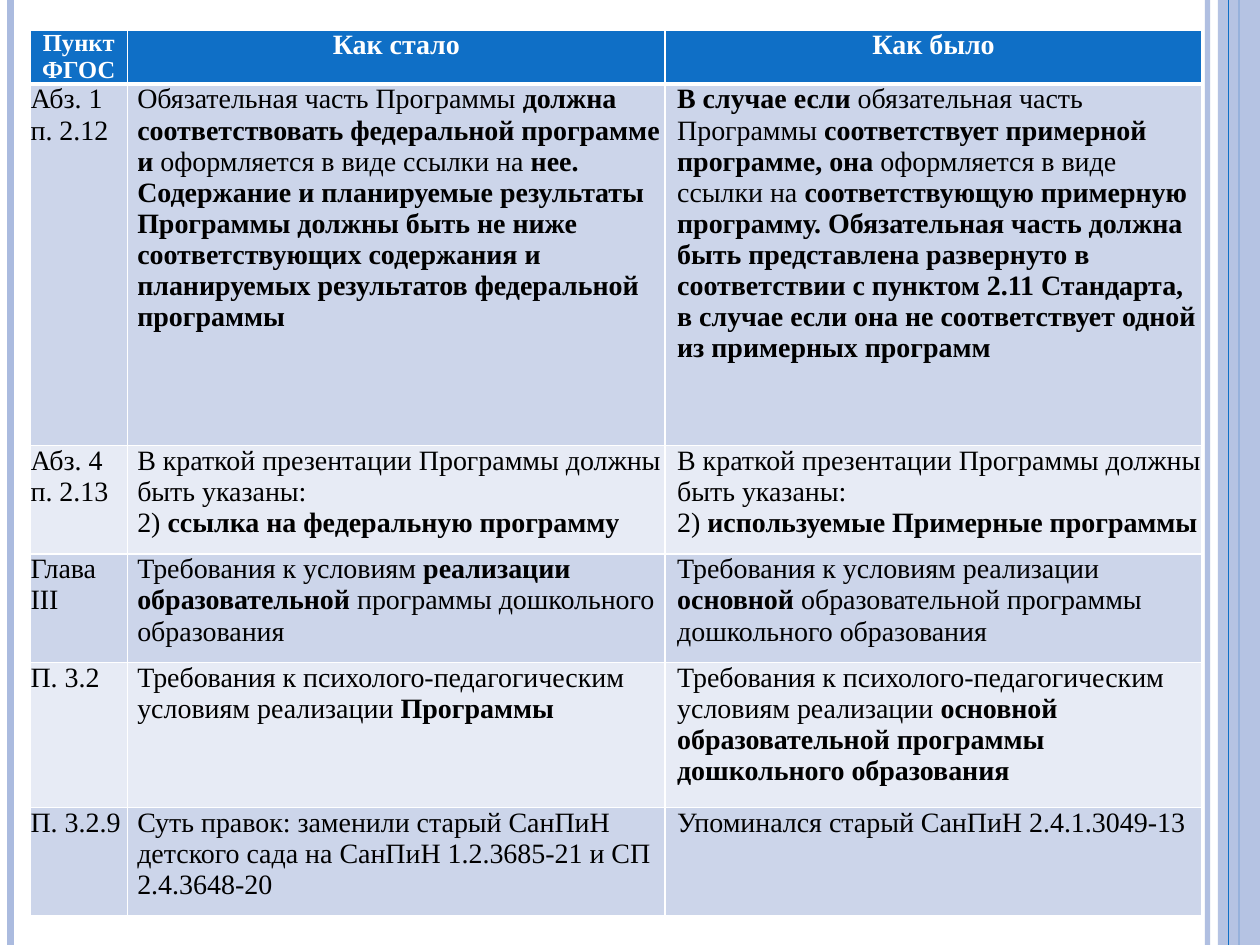
from dataclasses import dataclass
from itertools import product

from lxml.etree import SubElement
from pptx import Presentation
from pptx.dml.color import RGBColor as Rgb
from pptx.enum.shapes import MSO_CONNECTOR as Connector, MSO_SHAPE as Shape
from pptx.enum.text import PP_ALIGN as Align
from pptx.oxml import parse_xml
from pptx.oxml.ns import nsdecls, qn
from pptx.util import Pt

WIDTH, HEIGHT = 720, 540
COLORS = {
    "accent": "0F6FC6",
    "stripe": "ABBBDF",
    "band_dark": "CCD5EA",
    "band_light": "E7EBF5",
    "white": "FFFFFF",
    "black": "000000",
}
STRIPES_BELOW = [(690, "stripe", 3, 93), (6, "stripe", 4.5, 100), (708, "accent", 1.5, 100)]
COLUMN_WIDTHS = [56, 307, 307]
ROW_HEIGHTS = [30, 206.5, 62, 62, 83, 62]
INDENTS = [0, 5, 6.5]
JUSTIFIED_ROWS = {1, 4}
ROWS = [
    ["**Пункт ФГОС**", "**Как стало**", "**Как было**"],
    [
        "Абз. 1 \nп. 2.12",
        "Обязательная часть Программы **должна соответствовать федеральной программе и **"
        "оформляется в виде ссылки на** нее. Содержание и планируемые результаты Программы "
        "должны быть не ниже соответствующих содержания и планируемых результатов "
        "федеральной программы**",
        "**В случае если** обязательная часть Программы **соответствует примерной программе, она**"
        " оформляется в виде ссылки на **соответствующую примерную программу. Обязательная "
        "часть должна быть представлена развернуто в соответствии с пунктом 2.11 Стандарта, "
        "в случае если она не соответствует одной из примерных программ**",
    ],
    [
        "Абз. 4 \nп. 2.13",
        "В краткой презентации Программы должны быть указаны:\v"
        "2) **ссылка на федеральную программу**",
        "В краткой презентации Программы должны быть указаны:\v"
        "2) **используемые Примерные программы**",
    ],
    [
        "Глава III",
        "Требования к условиям **реализации образовательной** программы дошкольного образования",
        "Требования к условиям реализации **основной** образовательной программы "
        "дошкольного образования",
    ],
    [
        "П. 3.2",
        "Требования к психолого-педагогическим условиям реализации **Программы**",
        "Требования к психолого-педагогическим условиям реализации **основной "
        "образовательной программы дошкольного образования**",
    ],
    [
        "П. 3.2.9",
        "Суть правок: заменили старый СанПиН детского сада на СанПиН 1.2.3685-21 "
        "и СП 2.4.3648-20",
        "Упоминался старый СанПиН 2.4.1.3049-13",
    ],
]


@dataclass
class SlideBuilder:
    """Holds the text style and the current slide, and draws each kind of element."""

    slide: object
    font: str = "Times New Roman"

    def color(self, name):
        return Rgb.from_string(COLORS[name])

    def set_alpha(self, shape, percent):
        for color in shape._element.spPr.iter(qn("a:srgbClr")):
            SubElement(color, qn("a:alpha"), val=str(percent * 1000))

    def stripe(self, x, color, width, opacity=100):
        line = self.slide.shapes.add_connector(Connector.STRAIGHT, Pt(x), 0, Pt(x), Pt(HEIGHT))
        line.line.color.rgb = self.color(color)
        line.line.width = Pt(width)
        if opacity < 100:
            self.set_alpha(line, opacity)
        SubElement(line._element.spPr, qn("a:effectLst"))

    def panel(self, left, width, color, opacity):
        panel = self.slide.shapes.add_shape(Shape.RECTANGLE, Pt(left), 0, Pt(width), Pt(HEIGHT))
        panel.shadow.inherit = False
        panel.fill.solid()
        panel.fill.fore_color.rgb = self.color(color)
        panel.line.fill.background()
        self.set_alpha(panel, opacity)

    def add_text(self, paragraph, text, size, color):
        for index, part in enumerate(text.split("**")):
            for line_index, line in enumerate(part.split("\v")):
                if line_index:
                    paragraph.add_line_break()
                if not line:
                    continue
                run = paragraph.add_run()
                run.text = line
                run.font.color.rgb = self.color(color)
                style = {"name": self.font, "size": Pt(size), "bold": index % 2 == 1}
                for key, value in style.items():
                    setattr(run.font, key, value)

    def borders(self, cell, widths):
        properties = cell._tc.get_or_add_tcPr()
        for index, (side, width) in enumerate(widths.items()):
            properties.insert(index, parse_xml(
                f'<a:ln{side} {nsdecls("a")} w="{Pt(width)}"><a:solidFill>'
                f'<a:srgbClr val="{COLORS["white"]}"/></a:solidFill></a:ln{side}>'))

    def cell(self, cell, text, fill, color, size, align, indent, widths):
        margins = {"margin_left": 0.5, "margin_right": 0.5, "margin_top": 0, "margin_bottom": 0}
        for key, value in margins.items():
            setattr(cell, key, Pt(value))
        cell.fill.solid()
        cell.fill.fore_color.rgb = self.color(fill)
        self.borders(cell, widths)
        for index, line in enumerate(text.split("\n")):
            frame = cell.text_frame
            paragraph = frame.add_paragraph() if index else frame.paragraphs[0]
            paragraph.alignment = align
            if indent:
                paragraph._p.get_or_add_pPr().set("marL", str(Pt(indent)))
            self.add_text(paragraph, line, size, color)

    def table(self, left, top):
        table = self.slide.shapes.add_table(
            len(ROWS), len(COLUMN_WIDTHS), Pt(left), Pt(top),
            Pt(sum(COLUMN_WIDTHS)), Pt(sum(ROW_HEIGHTS))).table
        for column, width in zip(table.columns, COLUMN_WIDTHS):
            column.width = Pt(width)
        for row, height in zip(table.rows, ROW_HEIGHTS):
            row.height = Pt(height)
        for row, column in product(range(len(ROWS)), range(len(COLUMN_WIDTHS))):
            header, first = row == 0, column == 0
            justified = first and row in JUSTIFIED_ROWS
            self.cell(
                table.cell(row, column),
                ROWS[row][column],
                fill="accent" if header else "band_dark" if row % 2 else "band_light",
                color="white" if header else "black",
                size=14 if header and first else 16,
                align=Align.CENTER if header else Align.JUSTIFY if justified else Align.LEFT,
                indent=0 if header else INDENTS[column],
                widths={"L": 1, "R": 1, "T": 3 if row == 1 else 1, "B": 3 if header else 1})


def main():
    presentation = Presentation()
    presentation.slide_width, presentation.slide_height = Pt(WIDTH), Pt(HEIGHT)
    builder = SlideBuilder(presentation.slides.add_slide(presentation.slide_layouts[6]))
    for stripe in STRIPES_BELOW:
        builder.stripe(*stripe)
    builder.panel(696, 24, "stripe", 87)
    builder.stripe(702, "accent", 0.75)
    builder.table(17, 17)
    presentation.save("out.pptx")


if __name__ == "__main__":
    main()
